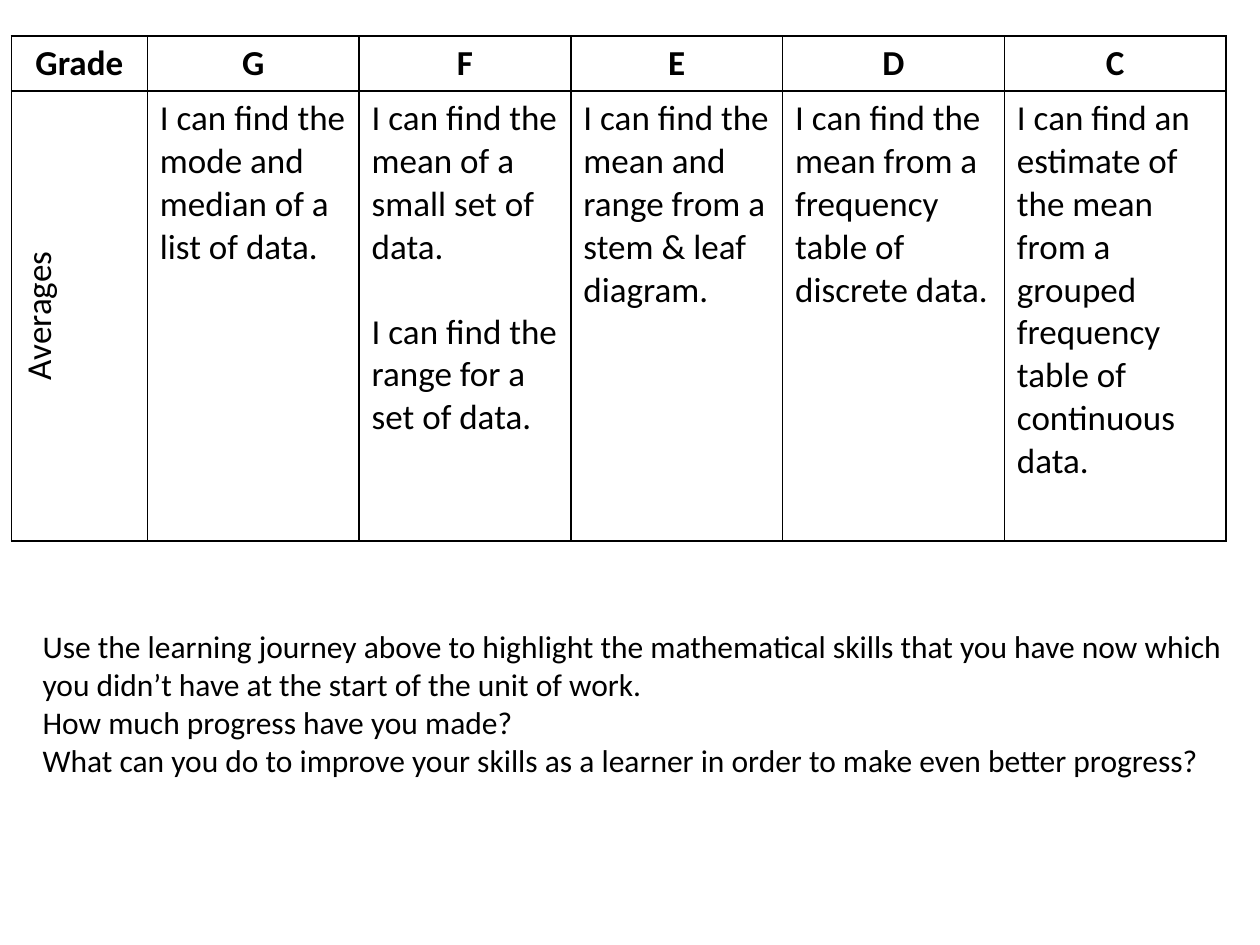
from dataclasses import dataclass

from lxml.etree import SubElement
from pptx import Presentation
from pptx.dml.color import RGBColor
from pptx.enum.text import MSO_AUTO_SIZE, PP_ALIGN
from pptx.oxml.ns import qn
from pptx.util import Cm, Pt


@dataclass(frozen=True)
class Theme:
    font: str = "Calibri"
    ink: str = "000000"
    table_size: int = 20
    body_size: int = 18
    paragraph_gap: int = 24
    border_width: int = 1


class SlideBuilder:
    def __init__(self, slide, theme):
        self.slide = slide
        self.theme = theme

    def add_lines(self, text_frame, lines, size, bold=False, align=PP_ALIGN.LEFT, gap=0):
        for index, line in enumerate(lines):
            paragraph = text_frame.add_paragraph() if index else text_frame.paragraphs[0]
            paragraph.alignment = align
            if index:
                paragraph.space_before = Pt(gap)
            run = paragraph.add_run()
            run.text = line
            run.font.name = self.theme.font
            run.font.size = Pt(size)
            run.font.bold = bold
            run.font.color.rgb = RGBColor.from_string(self.theme.ink)

    def text_box(self, left, top, width, height, lines):
        shape = self.slide.shapes.add_textbox(Cm(left), Cm(top), Cm(width), Cm(height))
        shape.text_frame.word_wrap = True
        shape.text_frame.auto_size = MSO_AUTO_SIZE.SHAPE_TO_FIT_TEXT
        self.add_lines(shape.text_frame, lines, self.theme.body_size)

    def border(self, cell):
        properties = cell._tc.get_or_add_tcPr()
        for side in ("a:lnL", "a:lnR", "a:lnT", "a:lnB"):
            line = SubElement(properties, qn(side), w=str(Pt(self.theme.border_width)))
            fill = SubElement(line, qn("a:solidFill"))
            SubElement(fill, qn("a:srgbClr"), val=self.theme.ink)

    def table(self, left, top, widths, heights, rows):
        frame = self.slide.shapes.add_table(
            len(rows), len(widths), Cm(left), Cm(top), Cm(sum(widths)), Cm(sum(heights))
        )
        table = frame.table
        table.first_row = False
        table.horz_banding = False
        for column, width in zip(table.columns, widths):
            column.width = Cm(width)
        for row, height in zip(table.rows, heights):
            row.height = Cm(height)
        for row_index, row in enumerate(rows):
            for column_index, lines in enumerate(row):
                cell = table.cell(row_index, column_index)
                is_header = row_index == 0
                is_label = column_index == 0
                self.border(cell)
                cell.fill.background()
                if is_label and not is_header:
                    cell._tc.get_or_add_tcPr().set("vert", "vert270")
                align = PP_ALIGN.CENTER if is_header or is_label else PP_ALIGN.LEFT
                self.add_lines(cell.text_frame, lines, self.theme.table_size,
                               is_header, align, self.theme.paragraph_gap)


GRADES = {
    "Grade": ["Averages"],
    "G": ["I can find the mode and median of a list of data."],
    "F": ["I can find the mean of a small set of data.",
          "I can find the range for a set of data."],
    "E": ["I can find the mean and range from a stem & leaf diagram."],
    "D": ["I can find the mean from a frequency table of discrete data."],
    "C": ["I can find an estimate of the mean from a grouped frequency table "
          "of continuous data."],
}

REFLECTION = [
    "Use the learning journey above to highlight the mathematical skills that you "
    "have now which you didn’t have at the start of the unit of work.",
    "How much progress have you made?",
    "What can you do to improve your skills as a learner in order to make even "
    "better progress?",
]


def main():
    presentation = Presentation()
    presentation.slide_width = Cm(25.4)
    presentation.slide_height = Cm(19.05)
    slide = presentation.slides.add_slide(presentation.slide_layouts[6])
    builder = SlideBuilder(slide, Theme())
    builder.text_box(0.61, 12.52, 24.79, 4.11, REFLECTION)
    builder.table(
        0.23, 0.73,
        [2.74] + [4.27] * 3 + [4.47] * 2,
        [1.1, 9.07],
        [[[grade] for grade in GRADES], list(GRADES.values())],
    )
    presentation.save("out.pptx")


if __name__ == "__main__":
    main()
